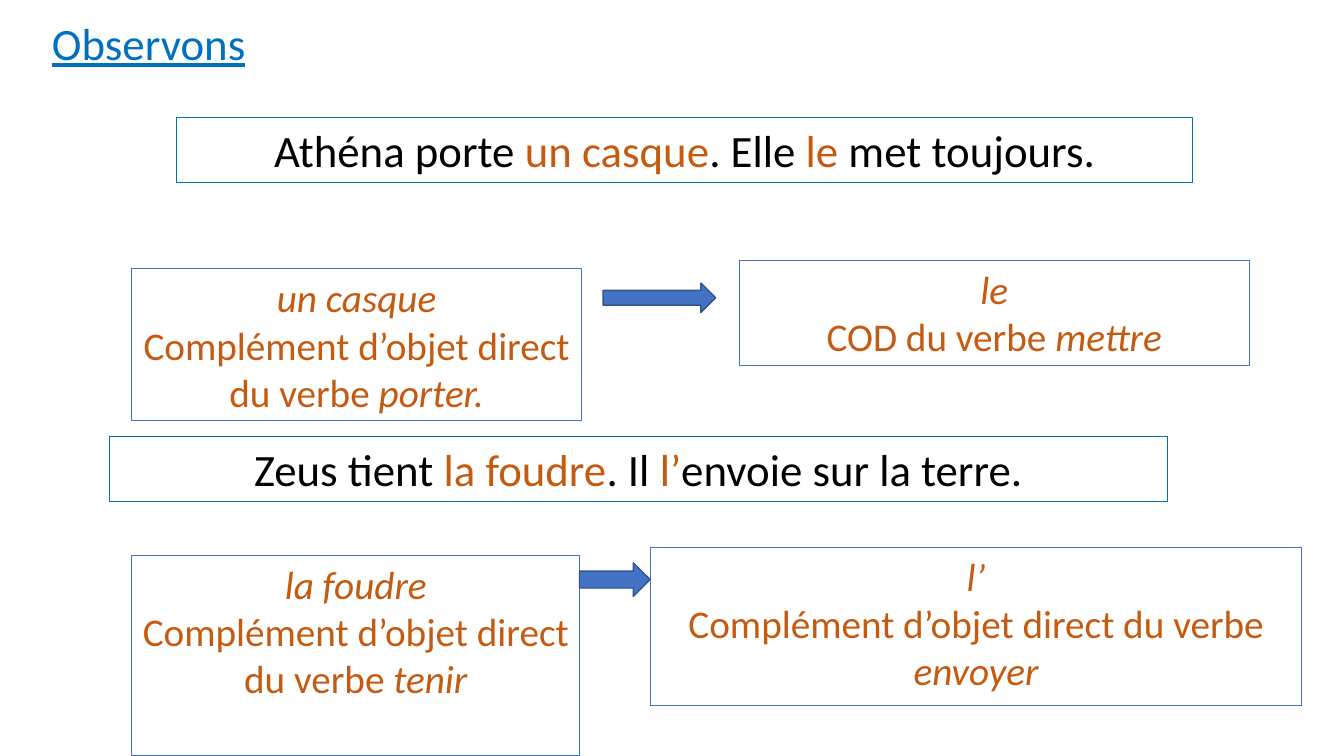
from dataclasses import dataclass

from pptx import Presentation
from pptx.dml.color import RGBColor
from pptx.enum.shapes import MSO_SHAPE as Preset
from pptx.enum.text import MSO_ANCHOR as Anchor, MSO_AUTO_SIZE as AutoSize, PP_ALIGN as Align
from pptx.util import Inches, Pt

COLUMNS, ROWS = 160, 90
FONT = "Calibri"
BLACK, ORANGE = "000000", "C55A11"
BLUE, ROYAL, NAVY = "0070C0", "4472C4", "325491"


@dataclass(frozen=True)
class Area:
    column: float
    row: float
    columns: float
    rows: float


@dataclass(frozen=True)
class Part:
    text: str
    color: str = ORANGE
    italic: bool = False
    underline: bool = False


@dataclass(frozen=True)
class Sentence:
    area: Area
    before: str
    noun: str
    between: str
    pronoun: str
    after: str


@dataclass(frozen=True)
class Analysis:
    area: Area
    word: str
    role: str
    verb: str


TITLE_AREA = Area(5, 1.3, 70, 7.7)
SENTENCES = [
    Sentence(Area(21, 14, 121, 7.7), "Athéna porte ", "un casque", ". Elle ", "le", " met toujours."),
    Sentence(Area(13, 52, 126, 7.7), "Zeus tient ", "la foudre", ". Il ", "l’", "envoie sur la terre."),
]
COD = "Complément d’objet direct du verbe "
ANALYSES = [
    Analysis(Area(15.7, 32, 53.5, 18.1), "un casque", COD, "porter."),
    Analysis(Area(88, 31, 60.7, 12.5), "le", "COD du verbe ", "mettre"),
    Analysis(Area(15.7, 66.1, 53.3, 23.9), "la foudre", COD, "tenir"),
    Analysis(Area(77.4, 65.2, 77.6, 18.8), "l’", COD, "envoyer"),
]
ARROWS = [Area(71.8, 33.7, 13.4, 3.5), Area(69, 67, 8.4, 4)]

deck = Presentation()
deck.slide_width, deck.slide_height = Inches(13.33), Inches(7.5)
slide = deck.slides.add_slide(deck.slide_layouts[6])


def rgb(color: str) -> RGBColor:
    return RGBColor.from_string(color)


def place(area: Area) -> tuple[int, int, int, int]:
    column, row = deck.slide_width / COLUMNS, deck.slide_height / ROWS
    return (int(area.column * column), int(area.row * row),
            int(area.columns * column), int(area.rows * row))


def write(frame, lines: list[list[Part]], size: int, align: Align) -> None:
    frame.word_wrap = True
    frame.auto_size = AutoSize.NONE
    frame.vertical_anchor = Anchor.TOP
    for index, parts in enumerate(lines):
        paragraph = frame.add_paragraph() if index else frame.paragraphs[0]
        paragraph.alignment = align
        for part in parts:
            run = paragraph.add_run()
            run.text = part.text
            run.font.name = FONT
            run.font.size = Pt(size)
            run.font.italic = part.italic
            run.font.underline = part.underline
            run.font.color.rgb = rgb(part.color)


def draw_frame(area: Area, border: str, lines: list[list[Part]], size: int) -> None:
    box = slide.shapes.add_shape(Preset.RECTANGLE, *place(area))
    box.shadow.inherit = False
    box.fill.background()
    box.line.color.rgb = rgb(border)
    box.line.width = Pt(0.75)
    write(box.text_frame, lines, size, Align.CENTER)


def draw_title(area: Area, text: str) -> None:
    title = slide.shapes.add_textbox(*place(area))
    write(title.text_frame, [[Part(text, BLUE, underline=True)]], 32, Align.LEFT)


def draw_sentence(sentence: Sentence) -> None:
    draw_frame(sentence.area, BLUE, [[
        Part(sentence.before, BLACK), Part(sentence.noun),
        Part(sentence.between, BLACK), Part(sentence.pronoun),
        Part(sentence.after, BLACK),
    ]], 32)


def draw_analysis(analysis: Analysis) -> None:
    draw_frame(analysis.area, ROYAL, [
        [Part(analysis.word, italic=True)],
        [Part(analysis.role), Part(analysis.verb, italic=True)],
    ], 28)


def draw_arrow(area: Area) -> None:
    arrow = slide.shapes.add_shape(Preset.RIGHT_ARROW, *place(area))
    arrow.shadow.inherit = False
    arrow.fill.solid()
    arrow.fill.fore_color.rgb = rgb(ROYAL)
    arrow.line.color.rgb = rgb(NAVY)
    arrow.line.width = Pt(1)


def main() -> None:
    draw_title(TITLE_AREA, "Observons")
    for sentence in SENTENCES:
        draw_sentence(sentence)
    for analysis in ANALYSES:
        draw_analysis(analysis)
    for arrow_area in ARROWS:
        draw_arrow(arrow_area)
    deck.save("out.pptx")


if __name__ == "__main__":
    main()
